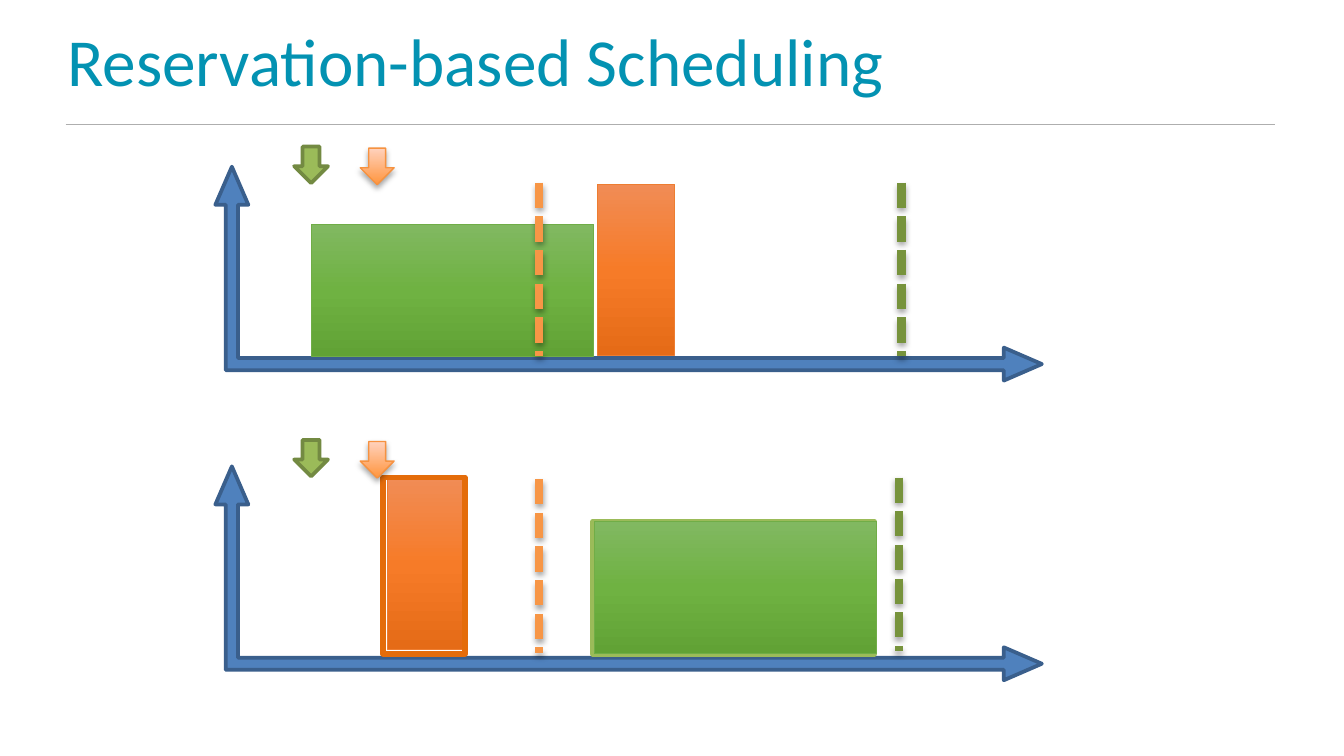
import lxml.etree
import pptx
import pptx.dml.color
import pptx.enum.dml
import pptx.enum.shapes
import pptx.enum.text
import pptx.oxml
import pptx.oxml.ns
import pptx.util

Cm = pptx.util.Cm
Pt = pptx.util.Pt
RGBColor = pptx.dml.color.RGBColor
MSO_SHAPE = pptx.enum.shapes.MSO_SHAPE
qn = pptx.oxml.ns.qn

TITLE_BLUE = RGBColor(0x03, 0x92, 0xB2)
RULE_GREY = RGBColor(0xAE, 0xAE, 0xAE)
WHITE = RGBColor(0xFF, 0xFF, 0xFF)
AXIS_FILL = RGBColor(0x4F, 0x81, 0xBD)
AXIS_LINE = RGBColor(0x3A, 0x5F, 0x8C)
GREEN = RGBColor(0x9B, 0xBB, 0x59)
GREEN_DARK = RGBColor(0x73, 0x8A, 0x42)
GREEN_DEADLINE = RGBColor(0x77, 0x93, 0x3C)
GREEN_EDGE = RGBColor(0x70, 0xAD, 0x47)
ORANGE_DEADLINE = RGBColor(0xF7, 0x96, 0x46)
ORANGE_EDGE = RGBColor(0xED, 0x7D, 0x31)
ORANGE_FRAME = RGBColor(0xE4, 0x6C, 0x0A)
ORANGE_ARROW_EDGE = RGBColor(0xF6, 0x92, 0x40)

# Gradient stops from top to bottom
GREEN_STOPS = (RGBColor(0x81, 0xB8, 0x61), RGBColor(0x6F, 0xB2, 0x42),
               RGBColor(0x61, 0xA2, 0x35))
ORANGE_STOPS = (RGBColor(0xF1, 0x8C, 0x55), RGBColor(0xF6, 0x7B, 0x28),
                RGBColor(0xE5, 0x6B, 0x17))
ARROW_STOPS = (RGBColor(0xFF, 0xD2, 0xBD), RGBColor(0xFF, 0x95, 0x3E))

GREEN_SIZE = (5.33, 2.49)
ORANGE_SIZE = (1.45, 3.23)
DEADLINE_LENGTH = 3.28


class SlideBuilder:
    """Draws scheduling diagrams on one slide; all lengths are in centimetres."""

    font = "Calibri"

    def __init__(self, slide):
        self.s = slide

    def title(self, text):
        sp = self.s.shapes.title
        sp.left, sp.top, sp.width, sp.height = Cm(1.02), Cm(0.08), Cm(22.86), Cm(2.39)
        tf = sp.text_frame
        tf.text = text
        tf.vertical_anchor = pptx.enum.text.MSO_ANCHOR.MIDDLE
        p = tf.paragraphs[0]
        p.alignment = pptx.enum.text.PP_ALIGN.LEFT
        p.line_spacing = 0.8
        r = p.runs[0]
        r.font.name, r.font.size = self.font, Pt(36)
        r.font.color.rgb = TITLE_BLUE

    def line(self, x1, y1, x2, y2, color, weight):
        cxn = self.s.shapes.add_connector(
            pptx.enum.shapes.MSO_CONNECTOR.STRAIGHT, Cm(x1), Cm(y1), Cm(x2), Cm(y2))
        cxn.line.color.rgb = color
        cxn.line.width = Pt(weight)
        lxml.etree.SubElement(cxn._element.spPr, qn("a:effectLst"))
        return cxn

    def shape(self, kind, x, y, size, fill, edge, weight):
        """fill is None, a colour, or a tuple of gradient stops."""
        sp = self.s.shapes.add_shape(kind, Cm(x), Cm(y), Cm(size[0]), Cm(size[1]))
        sp.shadow.inherit = False
        if fill is None:
            sp.fill.background()
        elif isinstance(fill, RGBColor):
            sp.fill.solid()
            sp.fill.fore_color.rgb = fill
        else:
            self.gradient(sp, fill)
        sp.line.color.rgb = edge
        sp.line.width = Pt(weight)
        return sp

    def gradient(self, sp, stops):
        sp.fill.gradient()
        sp.fill.gradient_angle = 270
        gs_list = sp._element.spPr.find(".//" + qn("a:gsLst"))
        for gs in list(gs_list):
            gs_list.remove(gs)
        for i, color in enumerate(stops):
            gs = lxml.etree.SubElement(gs_list, qn("a:gs"))
            gs.set("pos", str(100000 * i // (len(stops) - 1)))
            lxml.etree.SubElement(gs, qn("a:srgbClr")).set("val", str(color))

    def soft_shadow(self, sp):
        effects = sp._element.spPr.find(qn("a:effectLst"))
        effects.append(pptx.oxml.parse_xml(
            f'<a:outerShdw {pptx.oxml.ns.nsdecls("a")} blurRad="{int(Pt(3.1))}" '
            f'dist="{int(Pt(1.8))}" dir="5400000" rotWithShape="0">'
            '<a:srgbClr val="000000"><a:alpha val="35000"/></a:srgbClr>'
            '</a:outerShdw>'))

    def axes(self, y):
        """y is the top of the box before its quarter turn."""
        sp = self.shape(MSO_SHAPE.LEFT_UP_ARROW, 9.86, y, (4.04, 15.62),
                        AXIS_FILL, AXIS_LINE, 2)
        sp.rotation = 90
        for i, value in enumerate((0.057, 0.077, 0.178)):
            sp.adjustments[i] = value

    def task(self, x, y, size, fill, edge, weight=0.5):
        self.shape(MSO_SHAPE.RECTANGLE, x, y, size, fill, edge, weight)

    def deadline(self, x, y, color):
        cxn = self.line(x, y, x, y + DEADLINE_LENGTH, color, 4.5)
        cxn.line.dash_style = pptx.enum.dml.MSO_LINE.SQUARE_DOT
        self.soft_shadow(cxn)

    def arrivals(self, y):
        size = (0.64, 0.69)
        self.shape(MSO_SHAPE.DOWN_ARROW, 5.56, y, size, GREEN, GREEN_DARK, 2)
        sp = self.shape(MSO_SHAPE.DOWN_ARROW, 6.81, y + 0.03, size,
                        ARROW_STOPS, ORANGE_ARROW_EDGE, 0.75)
        self.soft_shadow(sp)


def main():
    prs = pptx.Presentation()
    prs.slide_width, prs.slide_height = Cm(25.4), Cm(14.28)
    slide = SlideBuilder(prs.slides.add_slide(prs.slide_layouts[5]))

    slide.title("Reservation-based Scheduling")
    slide.line(1.24, 2.36, 24.1, 2.36, RULE_GREY, 0.5)

    # Upper diagram: the orange task misses its deadline
    slide.axes(-2.64)
    slide.task(5.89, 4.24, GREEN_SIZE, GREEN_STOPS, GREEN_EDGE)
    slide.task(11.3, 3.48, ORANGE_SIZE, ORANGE_STOPS, ORANGE_EDGE)
    slide.deadline(10.19, 3.45, ORANGE_DEADLINE)
    slide.deadline(17.04, 3.45, GREEN_DEADLINE)
    slide.arrivals(2.77)

    # Lower diagram: reservations let both tasks meet their deadlines
    slide.axes(3.02)
    slide.task(7.32, 9.04, ORANGE_SIZE, ORANGE_STOPS, ORANGE_EDGE)
    slide.task(7.24, 9.02, (1.55, 3.33), None, ORANGE_FRAME, 3)
    slide.task(11.2, 9.86, GREEN_SIZE, WHITE, GREEN, 3)
    slide.task(11.23, 9.86, GREEN_SIZE, GREEN_STOPS, GREEN_EDGE)
    slide.deadline(10.19, 9.05, ORANGE_DEADLINE)
    slide.deadline(16.99, 9.02, GREEN_DEADLINE)
    slide.arrivals(8.31)

    prs.save("out.pptx")


if __name__ == "__main__":
    main()
